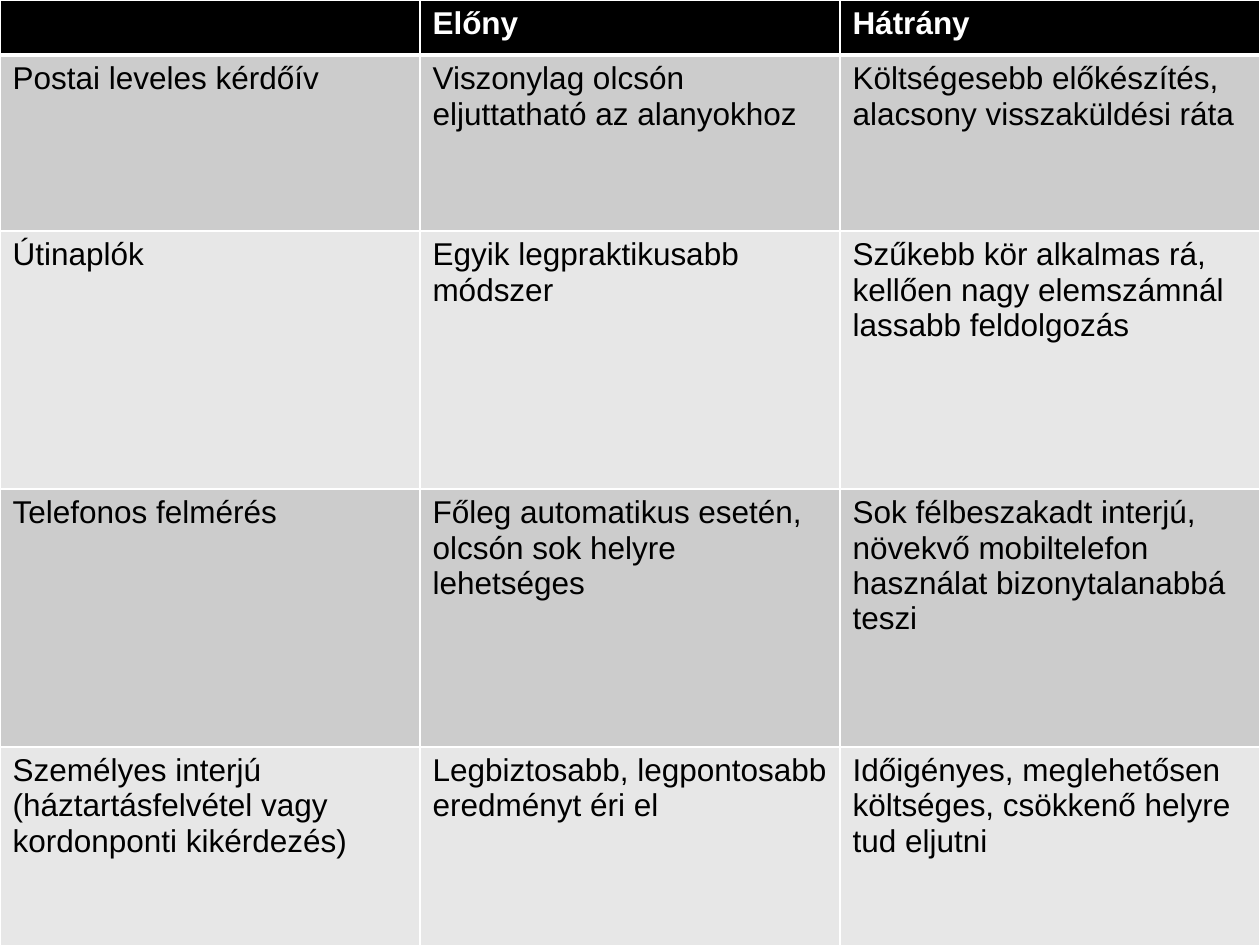
from dataclasses import dataclass

from lxml import etree
from pptx import Presentation
from pptx.dml.color import RGBColor
from pptx.oxml.ns import qn
from pptx.util import Emu, Pt

PX = 914400 // 126
SLIDE_W, SLIDE_H = 1260, 945
COL_W = SLIDE_W // 3
ROW_HEIGHTS = [55, 176, 258, 258, 217]

ROWS = [
    ["", "Előny", "Hátrány"],
    ["Postai leveles kérdőív",
     "Viszonylag olcsón eljuttatható az alanyokhoz",
     "Költségesebb előkészítés, alacsony visszaküldési ráta"],
    ["Útinaplók",
     "Egyik legpraktikusabb módszer",
     "Szűkebb kör alkalmas rá, kellően nagy elemszámnál lassabb feldolgozás"],
    ["Telefonos felmérés",
     "Főleg automatikus esetén, olcsón sok helyre lehetséges",
     "Sok félbeszakadt interjú, növekvő mobiltelefon használat "
     "bizonytalanabbá teszi"],
    ["Személyes interjú (háztartásfelvétel vagy kordonponti kikérdezés)",
     "Legbiztosabb, legpontosabb eredményt éri el",
     "Időigényes, meglehetősen költséges, csökkenő helyre tud eljutni"],
]


@dataclass(frozen=True)
class Theme:
    font: str = "Arial"
    size: int = 18
    text: str = "000000"
    header_text: str = "FFFFFF"
    header_fill: str = "000000"
    bands: tuple = ("CCCCCC", "E7E7E7")
    border: str = "FFFFFF"
    thin: int = 1
    thick: int = 3


THEME = Theme()


def px(n):
    return Emu(n * PX)


def write_text(tf, text, *, color, bold=False, size=THEME.size):
    if not text:
        return
    r = tf.paragraphs[0].add_run()
    r.text = text
    r.font.name = THEME.font
    r.font.size = Pt(size)
    r.font.bold = bold
    r.font.color.rgb = RGBColor.from_string(color)


def set_borders(cell, top, bottom):
    """Draw all four sides; must precede the fill, as the schema orders them."""
    tc_pr = cell._tc.get_or_add_tcPr()
    widths = {"lnL": THEME.thin, "lnR": THEME.thin, "lnT": top, "lnB": bottom}
    for side, width in widths.items():
        ln = etree.SubElement(tc_pr, qn(f"a:{side}"), w=str(Pt(width)))
        fill = etree.SubElement(ln, qn("a:solidFill"))
        etree.SubElement(fill, qn("a:srgbClr"), val=THEME.border)


def format_cell(cell, text, row):
    header = row == 0
    set_borders(cell,
                top=THEME.thick if row == 1 else THEME.thin,
                bottom=THEME.thick if header else THEME.thin)
    cell.fill.solid()
    fill = THEME.header_fill if header else THEME.bands[(row - 1) % 2]
    cell.fill.fore_color.rgb = RGBColor.from_string(fill)
    write_text(cell.text_frame, text, bold=header,
               color=THEME.header_text if header else THEME.text)


def add_comparison_table(s):
    frame = s.shapes.add_table(len(ROWS), len(ROWS[0]), 0, 0,
                               px(SLIDE_W), px(sum(ROW_HEIGHTS)))
    table = frame.table
    for col in table.columns:
        col.width = px(COL_W)
    for i, (height, texts) in enumerate(zip(ROW_HEIGHTS, ROWS)):
        table.rows[i].height = px(height)
        for j, text in enumerate(texts):
            format_cell(table.cell(i, j), text, i)


def main():
    prs = Presentation()
    prs.slide_width, prs.slide_height = px(SLIDE_W), px(SLIDE_H)
    s = prs.slides.add_slide(prs.slide_layouts[6])
    add_comparison_table(s)
    prs.save("out.pptx")


if __name__ == "__main__":
    main()
